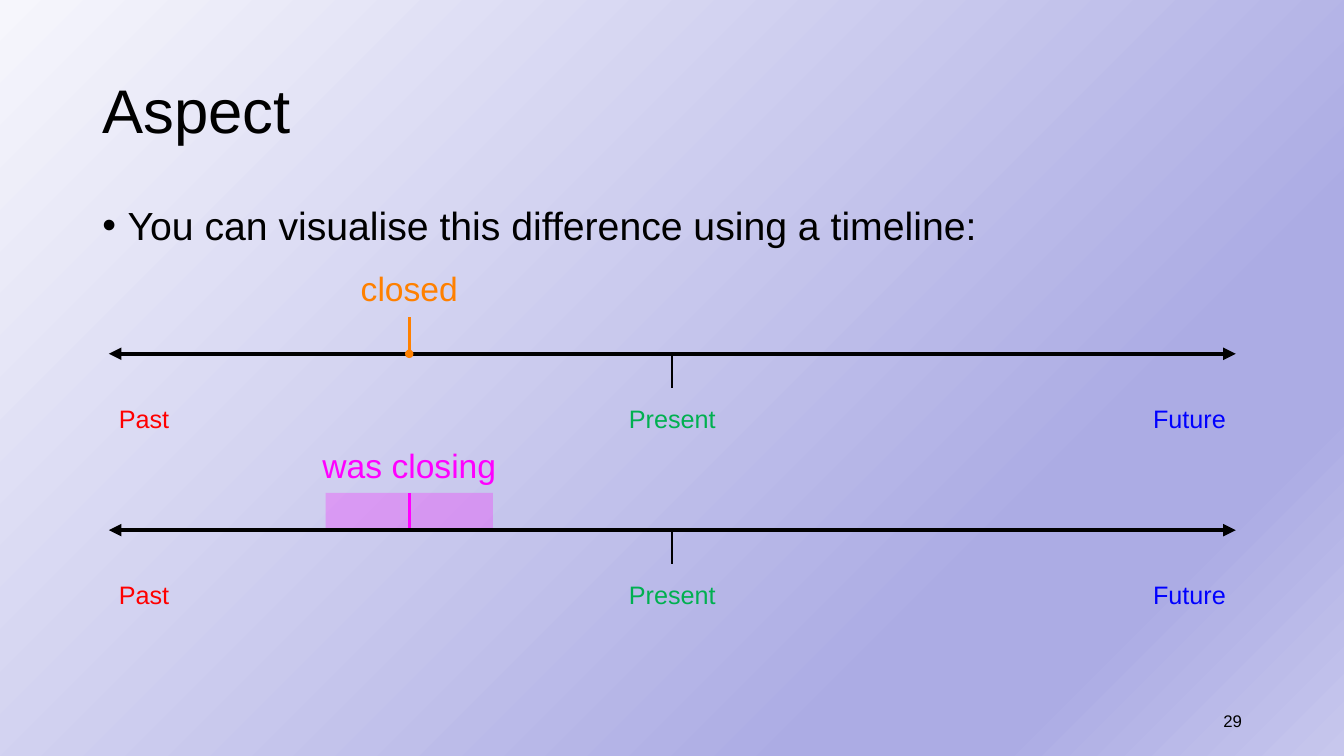
from collections import namedtuple

from lxml.etree import SubElement
from pptx import Presentation
from pptx.dml.color import RGBColor
from pptx.enum.shapes import MSO_CONNECTOR as Connector, MSO_SHAPE as Shape
from pptx.enum.text import MSO_ANCHOR as Anchor, PP_ALIGN as Align
from pptx.oxml.ns import qn
from pptx.util import Inches, Pt

WIDTH, HEIGHT = Inches(13.333), Inches(7.5)
FONT = "Arial"
COLOURS = {
    "text": "000000", "past": "FF0000", "present": "00B050", "future": "0000FF",
    "closed": "FF8000", "closing": "FF00FF",
}
BACKGROUND_STOPS = [(0, "F6F6FC"), (74, "ACACE4"), (83, "ACACE4"), (100, "C7C7ED")]

# All boxes are percentages of the slide's width and height.
Box = namedtuple("Box", "left top width height")
TITLE = Box(6.88, 5.33, 86.25, 19.33)
BODY = Box(6.88, 26.67, 86.25, 63.47)
NUMBER = Box(70.65, 92.67, 22.5, 5.33)
TIMELINES = [Box(8.1, top, 83.85, 23.2) for top in (34.8, 58.13)]
PRESENT_X, EVENT_X = 50, 30.45

# Rows inside a timeline, measured down from its top.
EVENT_HEIGHT, MARK_TOP, AXIS, TICK_END, LABEL_TOP = 6.67, 7.07, 12, 16.5, 17.87


def across(percent):
    return int(WIDTH * percent / 100)


def down(percent):
    return int(HEIGHT * percent / 100)


def place(box):
    return across(box.left), down(box.top), across(box.width), down(box.height)


def colour(name):
    return RGBColor.from_string(COLOURS[name])


def format_text(shape, text, size, colour_name="text", align=Align.LEFT, anchor=Anchor.TOP):
    frame = shape.text_frame
    frame.word_wrap = True
    frame.vertical_anchor = anchor
    paragraph = frame.paragraphs[0]
    paragraph.text = text
    paragraph.alignment = align
    paragraph.font.name = FONT
    paragraph.font.size = Pt(size)
    paragraph.font.color.rgb = colour(colour_name)
    return paragraph


def add_text(shapes, box, *args, **options):
    return format_text(shapes.add_textbox(*place(box)), *args, **options)


def add_line(shapes, start, end, colour_name, width, head=None, tail=None):
    line = shapes.add_connector(Connector.STRAIGHT, across(start[0]), down(start[1]),
                                across(end[0]), down(end[1]))
    line.line.color.rgb = colour(colour_name)
    line.line.width = Pt(width)
    outline = line.line._get_or_add_ln()
    for tag, kind in (("a:headEnd", head), ("a:tailEnd", tail)):
        if kind:
            SubElement(outline, qn(tag), type=kind)
    SubElement(line._element.spPr, qn("a:effectLst"))


def paint_background(slide):
    fill = slide.background.fill
    fill.gradient()
    fill.gradient_angle = 315  # counter-clockwise: top left to bottom right
    stops = slide.element.find(".//" + qn("a:gsLst"))
    for stop in list(stops):
        stops.remove(stop)
    for position, value in BACKGROUND_STOPS:
        stop = SubElement(stops, qn("a:gs"), pos=str(position * 1000))
        SubElement(stop, qn("a:srgbClr"), val=value)


def add_title(slide, box, text):
    title = slide.shapes.title
    title.left, title.top, title.width, title.height = place(box)
    format_text(title, text, 44, anchor=Anchor.MIDDLE).line_spacing = 0.9


def add_bullet(slide, box, text):
    paragraph = add_text(slide.shapes, box, text, 28)
    paragraph.line_spacing = 0.9
    paragraph.space_before = Pt(10)
    properties = paragraph._p.get_or_add_pPr()
    properties.set("marL", str(Inches(0.25)))
    properties.set("indent", str(-Inches(0.25)))
    SubElement(properties, qn("a:buFont"), typeface=FONT)
    SubElement(properties, qn("a:buChar"), char="•")


def add_timeline(slide, box):
    shapes = slide.shapes.add_group_shape().shapes
    axis = box.top + AXIS
    add_line(shapes, (box.left, axis), (box.left + box.width, axis), "text", 3,
             "triangle", "triangle")
    add_line(shapes, (PRESENT_X, axis), (PRESENT_X, box.top + TICK_END), "text", 2)
    label_width = box.width / 3
    labels = [("Past", Align.LEFT), ("Present", Align.CENTER), ("Future", Align.RIGHT)]
    for index, (text, align) in enumerate(labels):
        label = Box(box.left + index * label_width, box.top + LABEL_TOP,
                    label_width, box.height - LABEL_TOP)
        add_text(shapes, label, text, 18, text.lower(), align)


def add_event(slide, box, text, colour_name, head=None):
    """Name an event above the timeline and mark its moment on the axis."""
    label_width = 20
    label = Box(EVENT_X - label_width / 2, box.top, label_width, EVENT_HEIGHT)
    add_text(slide.shapes, label, text, 24, colour_name, Align.CENTER)
    add_line(slide.shapes, (EVENT_X, box.top + AXIS), (EVENT_X, box.top + MARK_TOP),
             colour_name, 2, head)


def add_duration(slide, box, colour_name, width=12.45):
    """Shade the stretch of time around the event."""
    area = Box(EVENT_X - width / 2, box.top + MARK_TOP, width, AXIS - MARK_TOP)
    shape = slide.shapes.add_shape(Shape.RECTANGLE, *place(area))
    shape.shadow.inherit = False
    shape.fill.solid()
    shape.fill.fore_color.rgb = colour(colour_name)
    shape.line.fill.background()
    value = shape._element.spPr.find(qn("a:solidFill")).find(qn("a:srgbClr"))
    SubElement(value, qn("a:alpha"), val="25000")


def main():
    presentation = Presentation()
    presentation.slide_width, presentation.slide_height = WIDTH, HEIGHT
    slide = presentation.slides.add_slide(presentation.slide_layouts.get_by_name("Title Only"))
    paint_background(slide)
    add_title(slide, TITLE, "Aspect")
    add_bullet(slide, BODY, "You can visualise this difference using a timeline:")
    add_text(slide.shapes, NUMBER, "29", 12, align=Align.RIGHT, anchor=Anchor.MIDDLE)

    moment, stretch = TIMELINES
    add_timeline(slide, moment)
    add_event(slide, moment, "closed", "closed", head="oval")
    add_duration(slide, stretch, "closing")
    add_event(slide, stretch, "was closing", "closing")
    add_timeline(slide, stretch)
    presentation.save("out.pptx")


if __name__ == "__main__":
    main()
